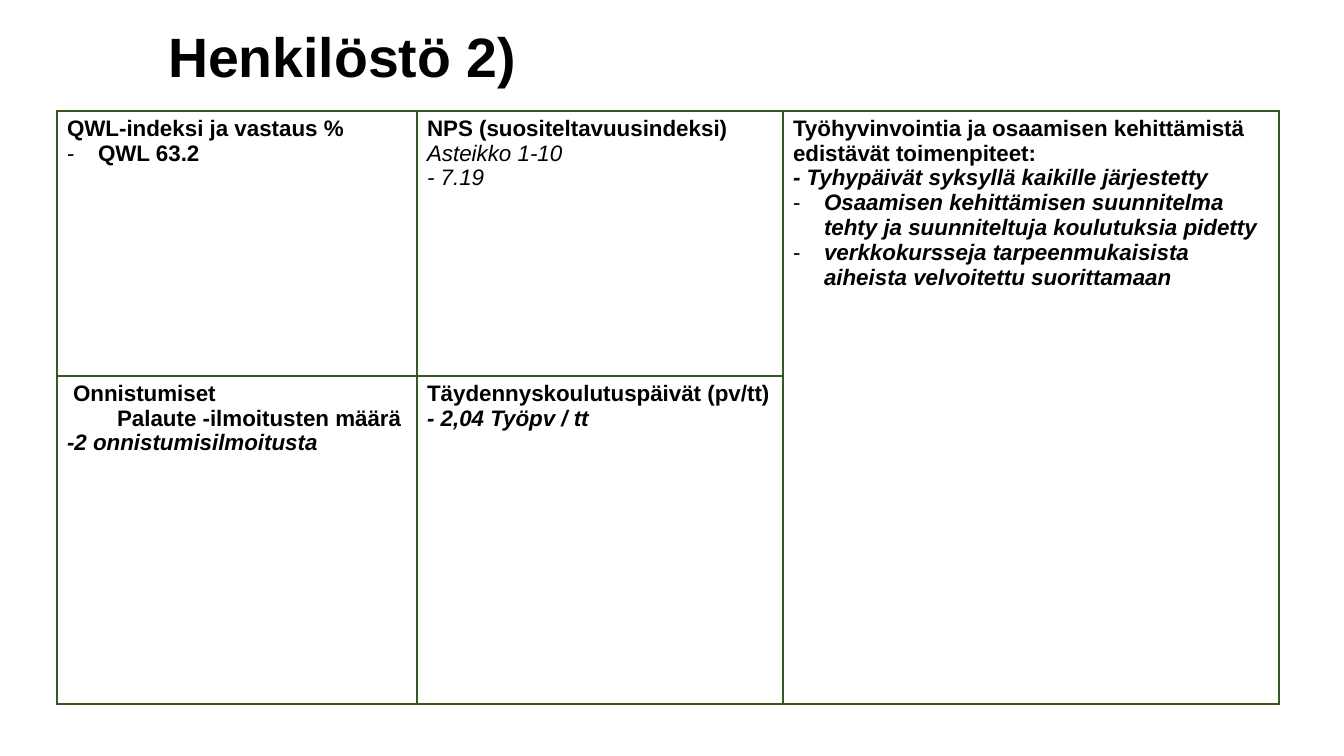
from dataclasses import dataclass

import pptx
import pptx.dml.color
import pptx.enum.text
import pptx.oxml.ns
import pptx.presentation
import pptx.slide
import pptx.table
import pptx.util
from lxml import etree

SCALE = 914400 / 100.8
FONT = "Arial"
INKS = {"text": "000000", "fill": "FFFFFF", "line": "385723"}
COLS = [360, 366, 496]
ROWS = [265, 328]


@dataclass
class Line:
    text: str
    bold: bool = True
    slant: bool = False
    left: int = 0
    dash: bool = False
    level: int = 0


@dataclass
class Box:
    row: int
    col: int
    lines: list[Line]


BOXES = [
    Box(0, 0, [
        Line("QWL-indeksi ja vastaus %"),
        Line("QWL 63.2", left=31, dash=True),
    ]),
    Box(0, 1, [
        Line("NPS (suositeltavuusindeksi)"),
        Line("Asteikko 1-10", bold=False, slant=True),
        Line("- 7.19", bold=False, slant=True),
    ]),
    Box(0, 2, [
        Line("Työhyvinvointia ja osaamisen kehittämistä edistävät toimenpiteet:"),
        Line("- Tyhypäivät syksyllä kaikille järjestetty", slant=True),
        Line("Osaamisen kehittämisen suunnitelma tehty ja suunniteltuja "
             "koulutuksia pidetty", slant=True, left=31, dash=True),
        Line("verkkokursseja tarpeenmukaisista aiheista velvoitettu "
             "suorittamaan", slant=True, left=31, dash=True),
    ]),
    Box(1, 0, [
        Line("Onnistumiset", left=6),
        Line("Palaute -ilmoitusten määrä", left=50, level=1),
        Line("-2 onnistumisilmoitusta", slant=True),
    ]),
    Box(1, 1, [
        Line("Täydennyskoulutuspäivät (pv/tt)"),
        Line("- 2,04 Työpv / tt", slant=True),
    ]),
]


def px(size: int) -> pptx.util.Emu:
    return pptx.util.Emu(round(size * SCALE))


def tint(name: str) -> pptx.dml.color.RGBColor:
    return pptx.dml.color.RGBColor.from_string(INKS[name])


def add_node(base: etree._Element, tag: str, **attrs: str) -> etree._Element:
    return etree.SubElement(base, pptx.oxml.ns.qn(tag), attrs)


def add_run(para, line: Line, size: float) -> None:
    run = para.add_run()
    run.text = line.text
    font = run.font
    font.name, font.size = FONT, pptx.util.Pt(size)
    font.bold, font.italic = line.bold, line.slant
    font.color.rgb = tint("text")


def add_line(para, line: Line) -> None:
    para.level = line.level
    props = para._p.get_or_add_pPr()
    props.set("marL", str(px(line.left)))
    props.set("indent", str(-px(line.left) if line.dash else 0))
    if line.dash:
        add_node(props, "a:buFont", typeface=FONT)
        add_node(props, "a:buChar", char="-")
    else:
        add_node(props, "a:buNone")
    add_run(para, line, 16)


def style_cell(cell: pptx.table._Cell) -> None:
    props = cell._tc.get_or_add_tcPr()
    for side in ("a:lnL", "a:lnR", "a:lnT", "a:lnB"):
        edge = add_node(props, side, w=str(pptx.util.Pt(1)))
        add_node(add_node(edge, "a:solidFill"), "a:srgbClr", val=INKS["line"])
    cell.fill.solid()
    cell.fill.fore_color.rgb = tint("fill")


def add_title(slide: pptx.slide.Slide) -> None:
    title = slide.shapes.title
    title.left, title.top = px(158), px(27)
    title.width, title.height = px(935), px(66)
    frame = title.text_frame
    frame.auto_size = pptx.enum.text.MSO_AUTO_SIZE.NONE
    frame.vertical_anchor = pptx.enum.text.MSO_ANCHOR.MIDDLE
    para = frame.paragraphs[0]
    para.alignment = pptx.enum.text.PP_ALIGN.LEFT
    para.line_spacing = 0.9
    add_run(para, Line("Henkilöstö 2)"), 39.6)


def add_grid(slide: pptx.slide.Slide) -> None:
    grid = slide.shapes.add_table(
        len(ROWS), len(COLS), px(57), px(111), px(sum(COLS)), px(sum(ROWS))
    ).table
    grid.first_row = grid.horz_banding = False
    for col, width in zip(grid.columns, COLS):
        col.width = px(width)
    for row, height in zip(grid.rows, ROWS):
        row.height = px(height)
    for cell in grid.iter_cells():
        style_cell(cell)
    grid.cell(0, 2).merge(grid.cell(1, 2))

    # Cell text
    for box in BOXES:
        frame = grid.cell(box.row, box.col).text_frame
        for i, line in enumerate(box.lines):
            add_line(frame.add_paragraph() if i else frame.paragraphs[0], line)


def main() -> None:
    deck = pptx.Presentation()
    deck.slide_width, deck.slide_height = px(1344), px(756)
    slide = deck.slides.add_slide(deck.slide_layouts[5])
    add_title(slide)
    add_grid(slide)
    deck.save("out.pptx")


if __name__ == "__main__":
    main()
